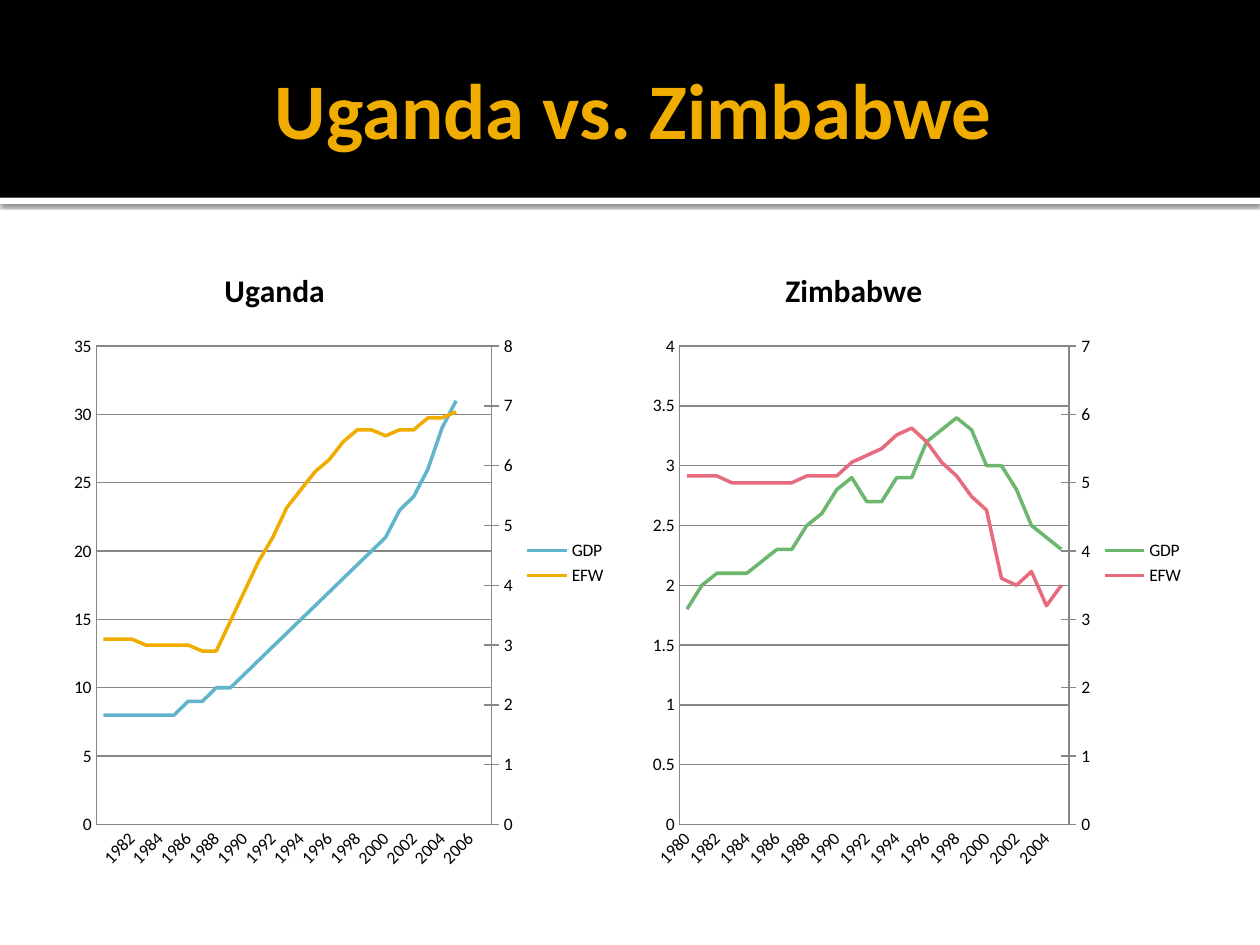
import copy

import pptx
import pptx.chart.data
import pptx.dml.color
import pptx.enum.chart
import pptx.enum.shapes
import pptx.enum.text
import pptx.oxml
import pptx.oxml.ns
import pptx.util

Pt = pptx.util.Pt
RGB = pptx.dml.color.RGBColor
qn = pptx.oxml.ns.qn
xl = pptx.enum.chart

BLACK = RGB(0x00, 0x00, 0x00)
WHITE = RGB(0xFF, 0xFF, 0xFF)
GOLD = RGB(0xF0, 0xAD, 0x00)
BLUE = RGB(0x60, 0xB5, 0xCC)
GREEN = RGB(0x6B, 0xB7, 0x6D)
ROSE = RGB(0xE6, 0x6C, 0x7D)
GRAY = RGB(0x87, 0x87, 0x87)
FONT = "Calibri"

TITLE = "Uganda vs. Zimbabwe"
# limits: (maximum, step) of the left and right axes
# plot: x, y, width, height as shares of the chart; title_at: x, y likewise
CHARTS = [
    dict(title="Uganda",
         years=["", ""] + [str(y) for y in range(1982, 2008)],
         gdp=[8, 8, 8, 8, 8, 8, 9, 9, 10, 10, 11, 12, 13, 14, 15, 16, 17, 18,
              19, 20, 21, 23, 24, 26, 29, 31],
         efw=[3.1, 3.1, 3.1, 3, 3, 3, 3, 2.9, 2.9, 3.4, 3.9, 4.4, 4.8, 5.3,
              5.6, 5.9, 6.1, 6.4, 6.6, 6.6, 6.5, 6.6, 6.6, 6.8, 6.8, 6.9],
         colors=(BLUE, GOLD), limits=((35, 5), (8, 1)),
         plot=(0.06, 0.16, 0.71, 0.75), title_at=(0.28, 0.03)),
    dict(title="Zimbabwe",
         years=[str(y) for y in range(1980, 2006)],
         gdp=[1.8, 2, 2.1, 2.1, 2.1, 2.2, 2.3, 2.3, 2.5, 2.6, 2.8, 2.9, 2.7,
              2.7, 2.9, 2.9, 3.2, 3.3, 3.4, 3.3, 3, 3, 2.8, 2.5, 2.4, 2.3],
         efw=[5.1, 5.1, 5.1, 5, 5, 5, 5, 5, 5.1, 5.1, 5.1, 5.3, 5.4, 5.5, 5.7,
              5.8, 5.6, 5.3, 5.1, 4.8, 4.6, 3.6, 3.5, 3.7, 3.2, 3.5],
         colors=(GREEN, ROSE), limits=((4, 0.5), (7, 1)),
         plot=(0.07, 0.16, 0.7, 0.75), title_at=(0.25, 0.03)),
]
CHART_LEFT, CHART_TOP, CHART_W, CHART_H, CHART_GAP = 36, 139.5, 318, 364.5, 12


def element(tag, **attrs):
    el = pptx.oxml.parse_xml(f"<{tag} {pptx.oxml.ns.nsdecls(tag[0])}/>")
    for key, value in attrs.items():
        el.set(key, str(value))
    return el


def place(parent, index, values, inner=False):
    """Give a chart part a manual layout in shares of the chart."""
    for old in parent.findall(qn("c:layout")):
        parent.remove(old)
    layout, manual = element("c:layout"), element("c:manualLayout")
    if inner:
        manual.append(element("c:layoutTarget", val="inner"))
    for key in ("xMode", "yMode"):
        manual.append(element(f"c:{key}", val="edge"))
    for key, value in zip("xywh", values):
        manual.append(element(f"c:{key}", val=value))
    layout.append(manual)
    parent.insert(index, layout)


def set_limits(axis, limits):
    axis.minimum_scale = 0
    axis.maximum_scale, axis.major_unit = limits


def use_right_axis(chart, limits):
    """Move the second series to a line plot with its own right-hand axis."""
    plot_area = chart._chartSpace.chart.plotArea
    left = plot_area.find(qn("c:lineChart"))
    cat, val = plot_area.find(qn("c:catAx")), plot_area.find(qn("c:valAx"))
    right, cat2, val2 = (copy.deepcopy(el) for el in (left, cat, val))
    left.remove(left.findall(qn("c:ser"))[1])
    right.remove(right.findall(qn("c:ser"))[0])
    left.addnext(right)
    val.addnext(val2)
    val2.addnext(cat2)

    ids = {cat.find(qn("c:axId")).get("val"): "50010",
           val.find(qn("c:axId")).get("val"): "50020"}
    for part in (right, cat2, val2):
        for tag in ("c:axId", "c:crossAx"):
            for el in part.findall(qn(tag)):
                el.set("val", ids[el.get("val")])
    cat2.find(qn("c:delete")).set("val", "1")
    val2.find(qn("c:axPos")).set("val", "r")
    val2.find(qn("c:crosses")).set("val", "max")

    axis = pptx.chart.axis.ValueAxis(val2)
    axis.has_major_gridlines = False
    axis.major_tick_mark = xl.XL_TICK_MARK.CROSS
    set_limits(axis, limits)


def add_line_chart(s, left, spec):
    data = pptx.chart.data.CategoryChartData()
    data.categories = spec["years"]
    data.add_series("GDP", spec["gdp"])
    data.add_series("EFW", spec["efw"])
    chart = s.shapes.add_chart(
        xl.XL_CHART_TYPE.LINE, Pt(left), Pt(CHART_TOP), Pt(CHART_W),
        Pt(CHART_H), data).chart
    chart.font.size, chart.font.name = Pt(10), FONT
    chart.font.color.rgb = BLACK

    chart.has_title = True
    r = chart.chart_title.text_frame.paragraphs[0].add_run()
    r.text = spec["title"]
    r.font.size, r.font.bold, r.font.name = Pt(18), True, FONT
    r.font.color.rgb = BLACK
    place(chart.chart_title._element, 1, spec["title_at"])

    chart.has_legend = True
    chart.legend.position = xl.XL_LEGEND_POSITION.RIGHT
    chart.legend.include_in_layout = False

    chart.plots[0].vary_by_categories = False
    for series, color in zip(chart.plots[0].series, spec["colors"]):
        series.smooth = False
        series.marker.style = xl.XL_MARKER_STYLE.NONE
        series.format.line.color.rgb = color
        series.format.line.width = Pt(2)

    cat, val = chart.category_axis, chart.value_axis
    for axis in (cat, val):
        axis.major_tick_mark = axis.minor_tick_mark = xl.XL_TICK_MARK.NONE
        axis.format.line.color.rgb = GRAY
        axis.format.line.width = Pt(0.75)
        axis.tick_labels.font.size = Pt(10)
    val.has_major_gridlines = True
    val.major_gridlines.format.line.color.rgb = GRAY
    val.major_gridlines.format.line.width = Pt(0.75)
    val.tick_labels.number_format = "General"
    val.tick_labels.number_format_is_linked = False
    set_limits(val, spec["limits"][0])
    cat._element.find(qn("c:txPr")).find(qn("a:bodyPr")).set("rot", "-2700000")
    cat._element.find(qn("c:noMultiLvlLbl")).addprevious(
        element("c:tickLblSkip", val=2))

    use_right_axis(chart, spec["limits"][1])
    place(chart._chartSpace.chart.plotArea, 0, spec["plot"], inner=True)


def add_band(s, top, height, color):
    """Add a full-width band behind the title."""
    sp = s.shapes.add_shape(pptx.enum.shapes.MSO_SHAPE.RECTANGLE, 0, Pt(top),
                            Pt(720), Pt(height))
    sp.shadow.inherit = False
    sp.fill.solid()
    sp.fill.fore_color.rgb = color
    sp.line.fill.background()
    s.shapes.title.element.addprevious(sp.element)
    return sp


prs = pptx.Presentation()
prs.slide_width, prs.slide_height = Pt(720), Pt(540)
s = prs.slides.add_slide(prs.slide_layouts[5])

strip = add_band(s, 113, 3.6, WHITE)
shadow = element("a:outerShdw", blurRad=Pt(2.5), dist=Pt(0.8), dir=5400000)
tint = element("a:srgbClr", val=BLACK)
tint.append(element("a:alpha", val=60000))
shadow.append(tint)
strip.element.spPr.find(qn("a:effectLst")).append(shadow)
add_band(s, 0, 113, BLACK)

title = s.shapes.title
title.left, title.top, title.width, title.height = (
    Pt(36), Pt(12.2), Pt(648), Pt(98.6))
tf = title.text_frame
tf.margin_left = Pt(7.2)
tf.margin_right = tf.margin_top = tf.margin_bottom = Pt(3.6)
tf.vertical_anchor = pptx.enum.text.MSO_ANCHOR.MIDDLE
p = tf.paragraphs[0]
p.alignment = pptx.enum.text.PP_ALIGN.CENTER
r = p.add_run()
r.text = TITLE
r.font.size, r.font.bold, r.font.name = Pt(45), True, FONT
r.font.color.rgb = GOLD

for i, spec in enumerate(CHARTS):
    add_line_chart(s, CHART_LEFT + i * (CHART_W + CHART_GAP), spec)

prs.save("out.pptx")
